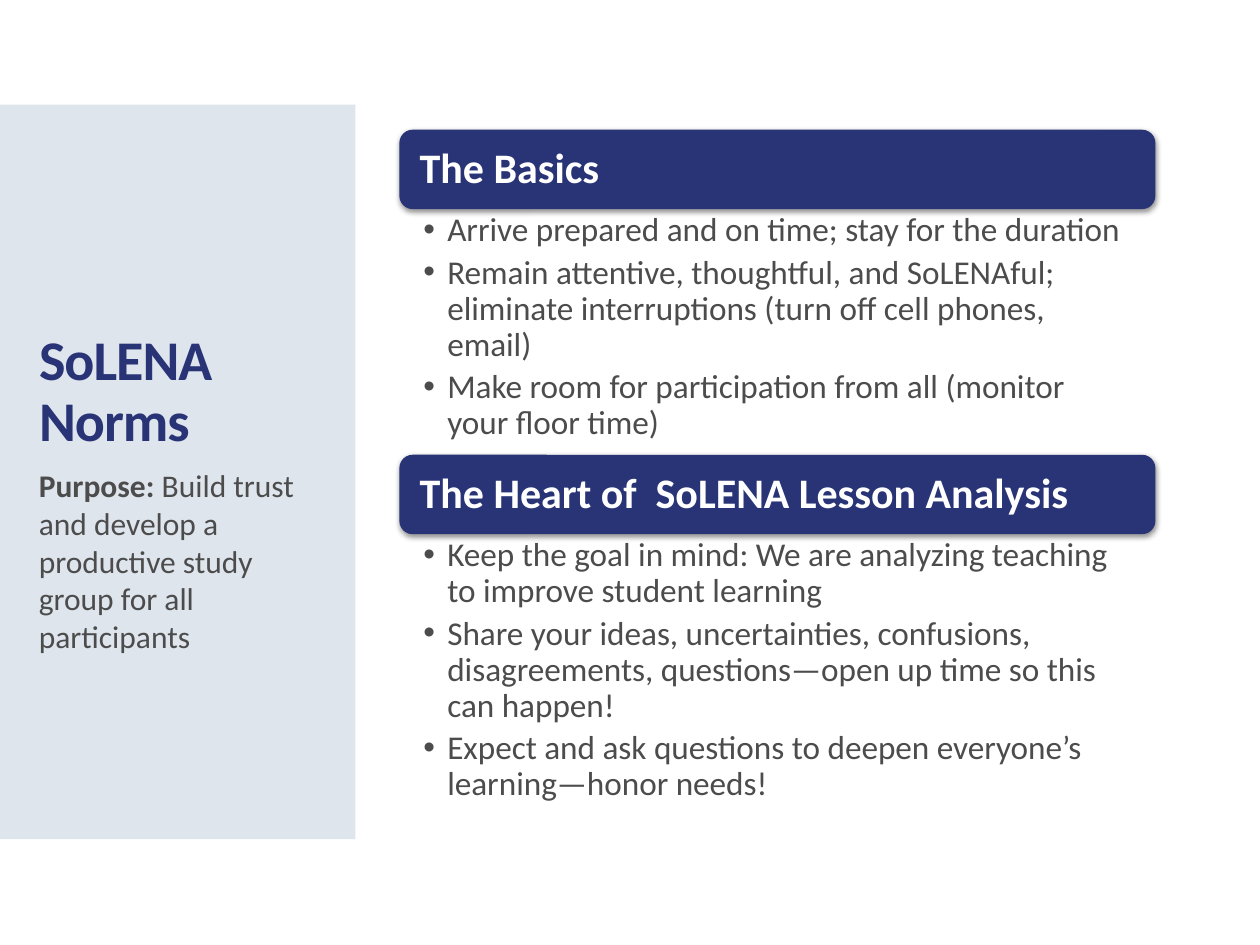
from dataclasses import dataclass

from lxml import etree
from pptx import Presentation
from pptx.dml.color import RGBColor
from pptx.enum.shapes import MSO_SHAPE
from pptx.enum.text import MSO_ANCHOR, MSO_AUTO_SIZE, PP_ALIGN
from pptx.oxml.ns import qn
from pptx.util import Emu, Inches, Pt

RECTANGLE = MSO_SHAPE.RECTANGLE
ROUNDED = MSO_SHAPE.ROUNDED_RECTANGLE
TOP, MIDDLE, BOTTOM = MSO_ANCHOR.TOP, MSO_ANCHOR.MIDDLE, MSO_ANCHOR.BOTTOM
LEFT = PP_ALIGN.LEFT
NO_AUTOFIT = MSO_AUTO_SIZE.NONE
TITLE_ONLY = 5


@dataclass(frozen=True)
class Theme:
    font: str = "Calibri"
    navy: str = "293476"
    panel: str = "DFE5ED"
    text: str = "4C4C4C"
    white: str = "FFFFFF"
    shadow: str = "000000"
    title_size: int = 32
    heading_size: int = 24
    bullet_size: int = 19
    purpose_size: int = 18
    line_spacing: float = 0.9


PURPOSE = [
    ("Purpose: ", True),
    ("Build trust and develop a productive study group for all participants", False),
]
NORMS = [
    ("The Basics", 1.95, [
        "Arrive prepared and on time; stay for the duration",
        "Remain attentive, thoughtful, and SoLENAful; eliminate interruptions "
        "(turn off cell phones, email)",
        "Make room for participation from all (monitor your floor time)",
    ]),
    ("The Heart of  SoLENA Lesson Analysis", 2.23, [
        "Keep the goal in mind: We are analyzing teaching to improve student learning",
        "Share your ideas, uncertainties, confusions, disagreements, "
        "questions—open up time so this can happen!",
        "Expect and ask questions to deepen everyone’s learning—honor needs!",
    ]),
]
NORMS_LEFT, NORMS_TOP, NORMS_WIDTH, BAR_HEIGHT = 3.17, 1.03, 6, 0.63


class SlideBuilder:
    def __init__(self, slide, theme):
        self.slide = slide
        self.theme = theme

    def frame(self, box, anchor, side=0.1, edge=0.05):
        frame = box.text_frame
        frame.word_wrap = True
        frame.auto_size = NO_AUTOFIT
        frame.vertical_anchor = anchor
        frame.margin_left = frame.margin_right = Inches(side)
        frame.margin_top = frame.margin_bottom = Inches(edge)
        return frame

    def span(self, para, text, size, color, bold=False):
        span = para.add_run()
        span.text = text
        font = span.font
        font.name = self.theme.font
        font.size = Pt(size)
        font.bold = bold
        font.color.rgb = RGBColor.from_string(color)
        return span

    def shape(self, kind, left, top, width, height, color):
        shape = self.slide.shapes.add_shape(
            kind, Inches(left), Inches(top), Inches(width), Inches(height))
        shape.shadow.inherit = False
        shape.fill.solid()
        shape.fill.fore_color.rgb = RGBColor.from_string(color)
        shape.line.fill.background()
        return shape

    def panel(self, left, top, width, height):
        panel = self.shape(RECTANGLE, left, top, width, height, self.theme.panel)
        self.slide.shapes._spTree.insert(2, panel._element)

    def title(self, text, left, top, width, height):
        title = self.slide.shapes.title
        title.left, title.top = Inches(left), Inches(top)
        title.width, title.height = Inches(width), Inches(height)
        para = self.frame(title, BOTTOM).paragraphs[0]
        para.alignment = LEFT
        para.line_spacing = self.theme.line_spacing
        span = self.span(para, text, self.theme.title_size, self.theme.navy, True)
        span.font._element.set("spc", "-60")

    def text_box(self, left, top, width, height, side=0.1, edge=0.05):
        box = self.slide.shapes.add_textbox(
            Inches(left), Inches(top), Inches(width), Inches(height))
        return self.frame(box, TOP, side, edge)

    def purpose(self, spans, left, top, width, height):
        para = self.text_box(left, top, width, height).paragraphs[0]
        for text, bold in spans:
            self.span(para, text, self.theme.purpose_size, self.theme.text, bold)

    def drop_shadow(self, shape):
        effects = shape._element.spPr.find(qn("a:effectLst"))
        shadow = etree.SubElement(
            effects, qn("a:outerShdw"), blurRad=str(Pt(3.5)), dist=str(Pt(1.1)),
            dir="5400000", algn="ctr", rotWithShape="0")
        color = etree.SubElement(shadow, qn("a:srgbClr"), val=self.theme.shadow)
        etree.SubElement(color, qn("a:alpha"), val="45000")

    def heading_bar(self, text, left, top, width, height):
        bar = self.shape(ROUNDED, left, top, width, height, self.theme.navy)
        self.drop_shadow(bar)
        para = self.frame(bar, MIDDLE, side=0.13, edge=0.1).paragraphs[0]
        para.alignment = LEFT
        para.line_spacing = self.theme.line_spacing
        self.span(para, text, self.theme.heading_size, self.theme.white, True)

    def bullet_list(self, items, left, top, width, height):
        frame = self.text_box(left, top, width, height, side=0.19, edge=0.03)
        indent = Emu(Inches(0.19))
        for index, item in enumerate(items):
            para = frame.add_paragraph() if index else frame.paragraphs[0]
            properties = para._p.get_or_add_pPr()
            properties.set("marL", str(indent))
            properties.set("indent", str(-indent))
            etree.SubElement(properties, qn("a:buFont"), typeface="Arial")
            etree.SubElement(properties, qn("a:buChar"), char="•")
            para.line_spacing = self.theme.line_spacing
            para.space_after = Pt(self.theme.bullet_size * 0.2)
            self.span(para, item, self.theme.bullet_size, self.theme.text)


def main():
    deck = Presentation()
    deck.slide_width, deck.slide_height = Inches(10), Inches(7.5)
    page = SlideBuilder(deck.slides.add_slide(deck.slide_layouts[TITLE_ONLY]), Theme())
    page.panel(0, 0.83, 2.82, 5.83)
    page.title("SoLENA Norms", 0.21, 1.25, 2.33, 2.4)
    page.purpose(PURPOSE, 0.21, 3.65, 2.33, 2.8)
    top = NORMS_TOP
    for heading, list_height, items in NORMS:
        page.heading_bar(heading, NORMS_LEFT, top, NORMS_WIDTH, BAR_HEIGHT)
        top += BAR_HEIGHT
        page.bullet_list(items, NORMS_LEFT, top, NORMS_WIDTH, list_height)
        top += list_height
    deck.save("out.pptx")


if __name__ == "__main__":
    main()
